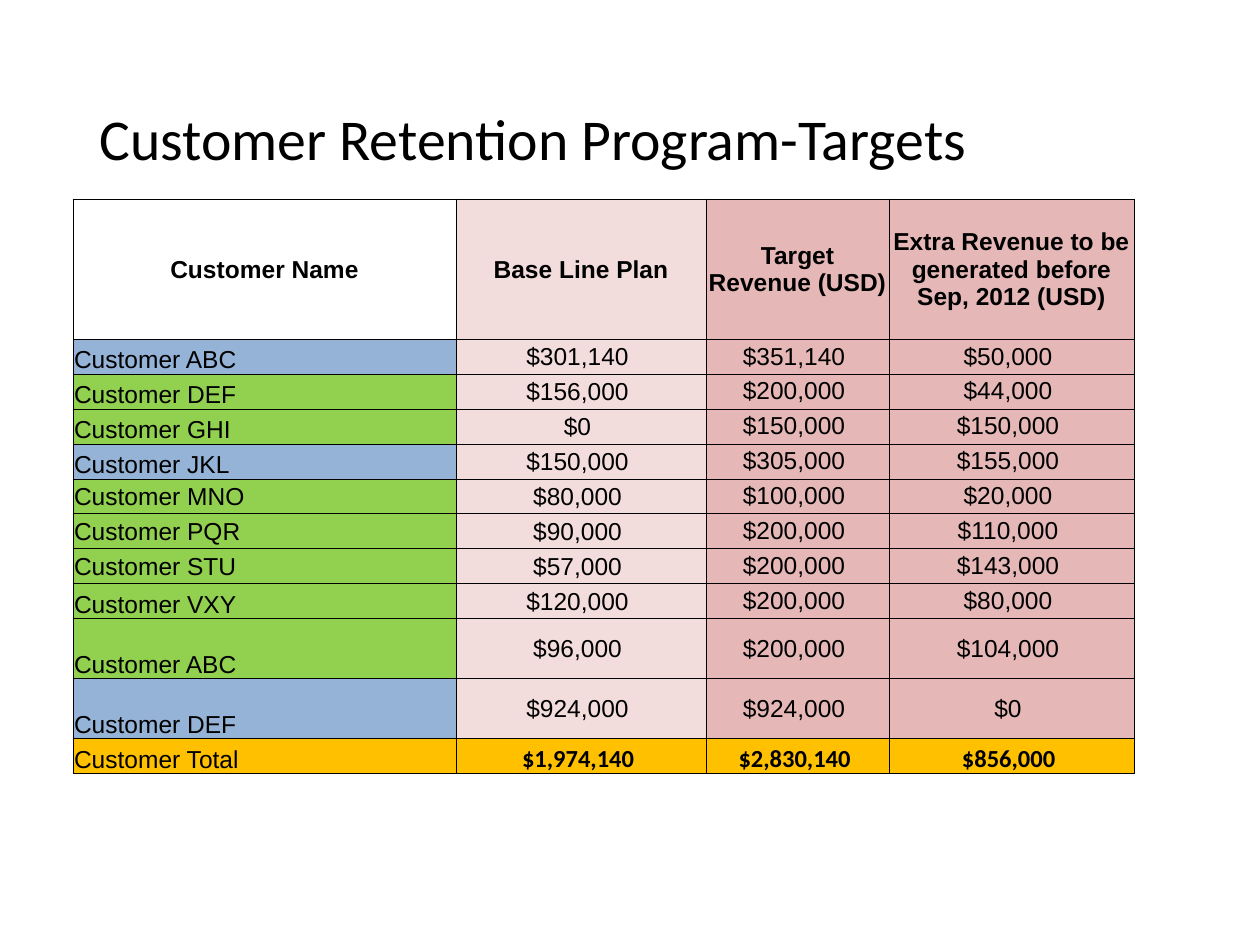
from dataclasses import dataclass

from lxml import etree
from pptx import Presentation
from pptx.dml.color import RGBColor
from pptx.enum.text import MSO_ANCHOR, PP_ALIGN
from pptx.oxml.ns import qn
from pptx.util import Emu, Pt

LEFT, CENTER = PP_ALIGN.LEFT, PP_ALIGN.CENTER
MIDDLE, BOTTOM = MSO_ANCHOR.MIDDLE, MSO_ANCHOR.BOTTOM
BLANK_LAYOUT = 6
EMU_PER_PX = 914400 / 126


@dataclass(frozen=True)
class Theme:
    ink: str = "000000"
    base: str = "F2DDDC"
    target: str = "E5B8B7"
    blue: str = "95B3D7"
    green: str = "92D050"
    total: str = "FFC000"
    heading_font: str = "Calibri"
    table_font: str = "Arial"
    title_size: int = 33
    table_size: int = 14
    border_width: float = 0.5


THEME = Theme()
COLUMN_WIDTHS = [383, 250, 183, 245]
HEADER_HEIGHT, ROW_HEIGHT, TALL_ROW_HEIGHT = 140, 35, 60
HEADERS = [
    ("Customer Name", None),
    ("Base Line Plan", THEME.base),
    ("Target Revenue (USD)", THEME.target),
    ("Extra Revenue to be generated before Sep, 2012 (USD)", THEME.target),
]
CUSTOMERS = [
    ("Customer ABC", 301140, 351140, THEME.blue, BOTTOM, ROW_HEIGHT),
    ("Customer DEF", 156000, 200000, THEME.green, BOTTOM, ROW_HEIGHT),
    ("Customer GHI", 0, 150000, THEME.green, BOTTOM, ROW_HEIGHT),
    ("Customer JKL", 150000, 305000, THEME.blue, BOTTOM, ROW_HEIGHT),
    ("Customer MNO", 80000, 100000, THEME.green, MIDDLE, ROW_HEIGHT),
    ("Customer PQR", 90000, 200000, THEME.green, MIDDLE, ROW_HEIGHT),
    ("Customer STU", 57000, 200000, THEME.green, MIDDLE, ROW_HEIGHT),
    ("Customer VXY", 120000, 200000, THEME.green, BOTTOM, ROW_HEIGHT),
    ("Customer ABC", 96000, 200000, THEME.green, BOTTOM, TALL_ROW_HEIGHT),
    ("Customer DEF", 924000, 924000, THEME.blue, BOTTOM, TALL_ROW_HEIGHT),
]


def px(length):
    return Emu(round(length * EMU_PER_PX))


class SlideBuilder:
    def __init__(self, slide, theme):
        self.slide = slide
        self.theme = theme

    def add_text(self, paragraph, text, font, size, bold=False, align=LEFT):
        paragraph.alignment = align
        run = paragraph.add_run()
        run.text = text
        run.font.name = font
        run.font.size = Pt(size)
        run.font.bold = bold
        run.font.color.rgb = RGBColor.from_string(self.theme.ink)

    def title(self, text, left, top, width, height):
        shape = self.slide.shapes.add_textbox(px(left), px(top), px(width), px(height))
        frame = shape.text_frame
        frame.word_wrap = True
        frame.vertical_anchor = MIDDLE
        paragraph = frame.paragraphs[0]
        paragraph.line_spacing = 0.9
        self.add_text(paragraph, text, self.theme.heading_font, self.theme.title_size)

    def table(self, left, top, column_widths, row_heights):
        shape = self.slide.shapes.add_table(
            len(row_heights), len(column_widths), px(left), px(top),
            px(sum(column_widths)), px(sum(row_heights)))
        table = shape.table
        table.first_row = False
        table.horz_banding = False
        for column, width in zip(table.columns, column_widths):
            column.width = px(width)
        for row, height in zip(table.rows, row_heights):
            row.height = px(height)
        return table

    def borders(self, cell):
        properties = cell._tc.get_or_add_tcPr()
        for side in ("a:lnL", "a:lnR", "a:lnT", "a:lnB"):
            line = etree.SubElement(
                properties, qn(side), w=str(Pt(self.theme.border_width)))
            fill = etree.SubElement(line, qn("a:solidFill"))
            etree.SubElement(fill, qn("a:srgbClr"), val=self.theme.ink)

    def cell(self, cell, text, fill, anchor=MIDDLE, align=CENTER,
             bold=False, font=None, inset=1):
        self.borders(cell)
        if fill:
            cell.fill.solid()
            cell.fill.fore_color.rgb = RGBColor.from_string(fill)
        else:
            cell.fill.background()
        cell.vertical_anchor = anchor
        cell.margin_left = cell.margin_right = cell.margin_top = px(inset)
        cell.margin_bottom = 0
        self.add_text(cell.text_frame.paragraphs[0], text,
                      font or self.theme.table_font, self.theme.table_size, bold, align)

    def revenue_row(self, row, name, base, target, name_fill, name_anchor,
                    fills, **amount_style):
        self.cell(row.cells[0], name, name_fill, name_anchor, LEFT)
        amounts = (base, target, target - base)
        for column, (amount, fill) in enumerate(zip(amounts, fills), start=1):
            self.cell(row.cells[column], f"${amount:,} ", fill,
                      inset=1 if column == 1 else 0, **amount_style)


def main():
    presentation = Presentation()
    presentation.slide_width = px(1260)
    presentation.slide_height = px(945)
    slide = presentation.slides.add_slide(presentation.slide_layouts[BLANK_LAYOUT])
    builder = SlideBuilder(slide, THEME)

    builder.title("Customer Retention Program-Targets", 87, 50, 1086, 183)

    row_heights = [HEADER_HEIGHT, *(customer[-1] for customer in CUSTOMERS), ROW_HEIGHT]
    table = builder.table(73, 199, COLUMN_WIDTHS, row_heights)
    rows = list(table.rows)

    for cell, (text, fill) in zip(rows[0].cells, HEADERS):
        builder.cell(cell, text, fill, bold=True)

    amount_fills = [fill for _, fill in HEADERS[1:]]
    for row, (name, base, target, fill, anchor, _) in zip(rows[1:], CUSTOMERS):
        builder.revenue_row(row, name, base, target, fill, anchor, amount_fills)

    base_total = sum(customer[1] for customer in CUSTOMERS)
    target_total = sum(customer[2] for customer in CUSTOMERS)
    builder.revenue_row(
        rows[-1], "Customer Total", base_total, target_total, THEME.total, BOTTOM,
        [THEME.total] * 3, anchor=BOTTOM, bold=True, font=THEME.heading_font)

    presentation.save("out.pptx")


if __name__ == "__main__":
    main()
